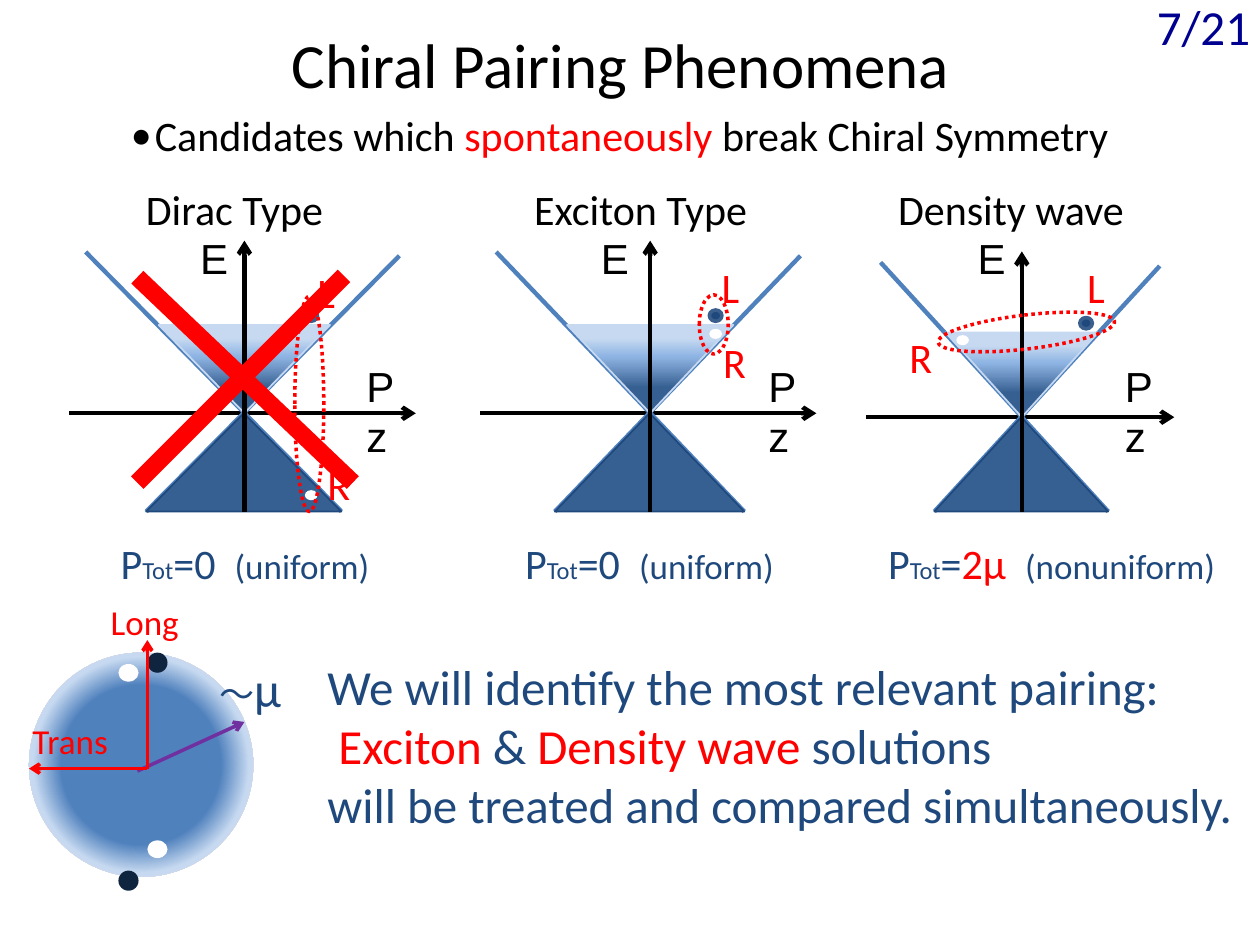
from lxml.etree import SubElement as Sub
from pptx import Presentation as Deck
from pptx.dml.color import RGBColor as Rgb
from pptx.enum.dml import MSO_LINE as Dash
from pptx.enum.shapes import MSO_CONNECTOR as Link, MSO_SHAPE as Kind
from pptx.enum.text import MSO_ANCHOR as Anchor, PP_ALIGN as Align
from pptx.oxml.ns import qn
from pptx.util import Inches, Pt

HUES = {
    "black": "000000", "white": "FFFFFF", "red": "FF0000", "navy": "1F497D",
    "blue": "4F81BD", "steel": "376092", "sky": "8EB4E3", "pale": "C6D9F1",
    "rim": "3A5F8C", "ink": "0F243E", "rose": "F2DCDB", "plum": "7030A0",
    "page": "000090",
}


class Board:
    font = "Calibri"
    size = 24

    def __init__(self, deck):
        self.slide = deck.slides.add_slide(deck.slide_layouts[5])
        self.shapes = self.slide.shapes

    def hue(self, name):
        return Rgb.from_string(HUES[name])

    def style(self, run, size, hue, font=None):
        run.font.name = font or self.font
        run.font.size = Pt(size)
        run.font.color.rgb = self.hue(hue)

    def title(self, text, *box):
        head = self.shapes.title
        head.left, head.top, head.width, head.height = map(Inches, box)
        head.text_frame.text = text
        head.text_frame.vertical_anchor = Anchor.MIDDLE
        para = head.text_frame.paragraphs[0]
        para.alignment = Align.CENTER
        self.style(para.runs[0], 36, "black")

    def text(self, lines, x, y, w, h=0.5, size=None, hue="black", font=None, align=Align.LEFT):
        size = size or self.size
        frame = self.shapes.add_textbox(*map(Inches, (x, y, w, h))).text_frame
        frame.word_wrap = True
        if isinstance(lines, str):
            frame.text = lines
            para = frame.paragraphs[0]
            para.alignment = align
            self.style(para.runs[0], size, hue, font)
            return frame
        for i, parts in enumerate(lines):
            para = frame.add_paragraph() if i else frame.paragraphs[0]
            para.alignment = align
            for words, tint, points in parts:
                run = para.add_run()
                run.text = words
                self.style(run, points or size, tint or hue, font)
        return frame

    def bullet(self, parts, *box):
        frame = self.text([parts], *box)
        props = frame.paragraphs[0]._p.get_or_add_pPr()
        gap = Inches(0.19)
        props.set("marL", str(gap))
        props.set("indent", str(-gap))
        Sub(props, qn("a:buFont"), typeface=self.font)
        Sub(props, qn("a:buChar"), char="•")

    def line(self, x1, y1, x2, y2, hue="black", width=2.5, arrow=False):
        item = self.shapes.add_connector(Link.STRAIGHT, *map(Inches, (x1, y1, x2, y2)))
        item.line.color.rgb = self.hue(hue)
        item.line.width = Pt(width)
        props = item._element.spPr
        if arrow:
            Sub(props.find(qn("a:ln")), qn("a:tailEnd"), type="arrow")
        Sub(props, qn("a:effectLst"))

    def shape(self, kind, x, y, w, h, fill=None, edge=None, width=1):
        item = self.shapes.add_shape(kind, *map(Inches, (x, y, w, h)))
        item.shadow.inherit = False
        if fill:
            item.fill.solid()
            item.fill.fore_color.rgb = self.hue(fill)
        else:
            item.fill.background()
        if edge:
            item.line.color.rgb = self.hue(edge)
            item.line.width = Pt(width)
        else:
            item.line.fill.background()
        return item

    def fade(self, item, stops, round=False):
        props = item._element.spPr
        old = props.find(qn("a:solidFill"))
        grad = Sub(props, qn("a:gradFill"), rotWithShape="1")
        props.replace(old, grad)
        steps = Sub(grad, qn("a:gsLst"))
        for place, name in stops:
            stop = Sub(steps, qn("a:gs"), pos=str(place * 1000))
            Sub(stop, qn("a:srgbClr"), val=HUES[name])
        if round:
            way = Sub(grad, qn("a:path"), path="circle")
            Sub(way, qn("a:fillToRect"), **dict.fromkeys("ltrb", "50000"))
        else:
            Sub(grad, qn("a:lin"), ang="16200000", scaled="0")

    def dot(self, x, y, hue, w=0.1, h=0.08, edge=None):
        self.shape(Kind.OVAL, x, y, w, h, hue, edge, 2)

    def loop(self, x, y, w, h, turn=0):
        ring = self.shape(Kind.OVAL, x, y, w, h, edge="red", width=2)
        ring.line.dash_style = Dash.ROUND_DOT
        ring.rotation = turn

    def cone(self, mid, wide, tall, e_left, p_left):
        base = 4.06

        def px(d):
            return mid + d * wide

        def py(d):
            return base - d * tall

        apex = py(0.78)
        self.line(px(-1.39), apex, px(1.36), apex, arrow=True)
        self.line(px(1.23), py(2.03), px(-0.78), base, "blue")
        self.line(px(-1.26), py(2.06), px(0.77), base, "blue")
        sea = self.shape(Kind.ISOSCELES_TRIANGLE, px(-0.68), py(1.48),
                         1.36 * wide, 0.7 * tall, "pale", "pale")
        sea._element.spPr.xfrm.set("flipV", "1")
        self.fade(sea, [(15, "pale"), (36, "sky"), (71, "steel")])
        self.shape(Kind.ISOSCELES_TRIANGLE, px(-0.78), apex,
                   1.55 * wide, 0.78 * tall, "steel", "navy")
        self.line(mid, base, mid, py(2.15), arrow=True)
        self.text("E", e_left, 1.8, 0.39, font="Arial")
        self.text("Pz", p_left, 2.81, 0.56, font="Arial")

    def pair(self, hole, full, ring, left, right):
        self.dot(*hole, "white")
        self.dot(*full, "navy", h=0.09, edge="rim")
        self.loop(*ring)
        self.text("L", *left, 0.46, hue="red")
        self.text("R", *right, 0.46, hue="red")

    def total(self, parts, note, x, w):
        row = [("P", None, None), ("Tot", None, 14), *parts, (note, None, 20)]
        self.text([row], x, 4.22, w, hue="navy")


def main():
    deck = Deck()
    deck.slide_width, deck.slide_height = Inches(10), Inches(7.5)
    board = Board(deck)

    board.title("Chiral Pairing Phenomena", 0.55, 0.15, 8.75, 0.71)
    board.bullet([("Candidates which ", None, None), ("spontaneously ", "red", None),
                  ("break Chiral Symmetry", None, None)], 0.94, 0.82, 8.2)
    board.text("7/21", 8.92, -0.08, 1.1, 0.57, 28, "page", align=Align.RIGHT)

    for cone in [(1.94, 1, 1, 1.49, 2.81), (5.16, 0.97, 1, 4.67, 6),
                 (8.11, 0.89, 0.96, 7.66, 8.83)]:
        board.cone(*cone)
    for name, x, w in [("Dirac Type", 1.06, 1.75), ("Exciton Type", 4.14, 2.03),
                       ("Density wave", 7.03, 2.03)]:
        board.text(name, x, 1.41, w)

    pairs = [
        ((2.42, 3.89), (2.42, 2.46), (2.34, 2.35, 0.23, 1.71), (2.42, 2.07), (2.5, 3.59)),
        ((5.63, 2.61), (5.63, 2.46), (5.55, 2.34, 0.23, 0.47), (5.63, 2.03), (5.64, 2.62)),
        ((7.59, 2.66), (8.57, 2.52), (8.01, 1.93, 0.27, 1.41, 83.3), (8.53, 2.03), (7.12, 2.58)),
    ]
    for pair in pairs:
        board.pair(*pair)

    zero = [("=0  ", None, None)]
    shift = [("=", None, None), ("2μ  ", "red", None)]
    board.total(zero, "(uniform)", 0.86, 2.42)
    board.total(zero, "(uniform)", 4.07, 2.41)
    board.total(shift, "(nonuniform)", 6.95, 2.89)

    board.line(1.09, 3.83, 2.73, 2.19, "red", 10)
    board.line(1.09, 2.2, 2.8, 3.83, "red", 10)

    disc = board.shape(Kind.OVAL, 0.23, 5.18, 1.78, 1.78, "blue")
    board.fade(disc, [(50, "blue"), (68, "pale"), (100, "rose")], round=True)
    board.line(1.09, 6.12, 1.94, 5.73, "plum", 2, True)
    board.text("Long", 0.78, 4.72, 0.94, 0.44, 20, "red")
    board.text([[("～", None, 20), ("μ", None, None)]], 1.64, 5.18, 0.78, 0.57, 28, "navy")
    for x, y, hue, h in [(1.17, 5.18, "ink", 0.16), (1.17, 6.67, "white", 0.14),
                         (0.94, 5.27, "white", 0.14), (0.94, 6.91, "ink", 0.16)]:
        board.dot(x, y, hue, 0.16, h)
    board.line(1.17, 6.1, 1.17, 5.08, "red", 2, True)
    board.line(1.17, 6.1, 0.23, 6.1, "red", 2, True)
    board.text("Trans", 0.16, 5.66, 0.94, 0.44, 20, "red")

    board.text([
        [("We will identify the most relevant pairing:", None, None)],
        [(" ", None, None), ("Exciton", "red", None), (" & ", None, None),
         ("Density wave ", "red", None), ("solutions", None, None)],
        [("will be treated and compared simultaneously.", None, None)],
    ], 2.5, 5.16, 7.42, 1.51, 28, "navy")

    deck.save("out.pptx")


if __name__ == "__main__":
    main()
